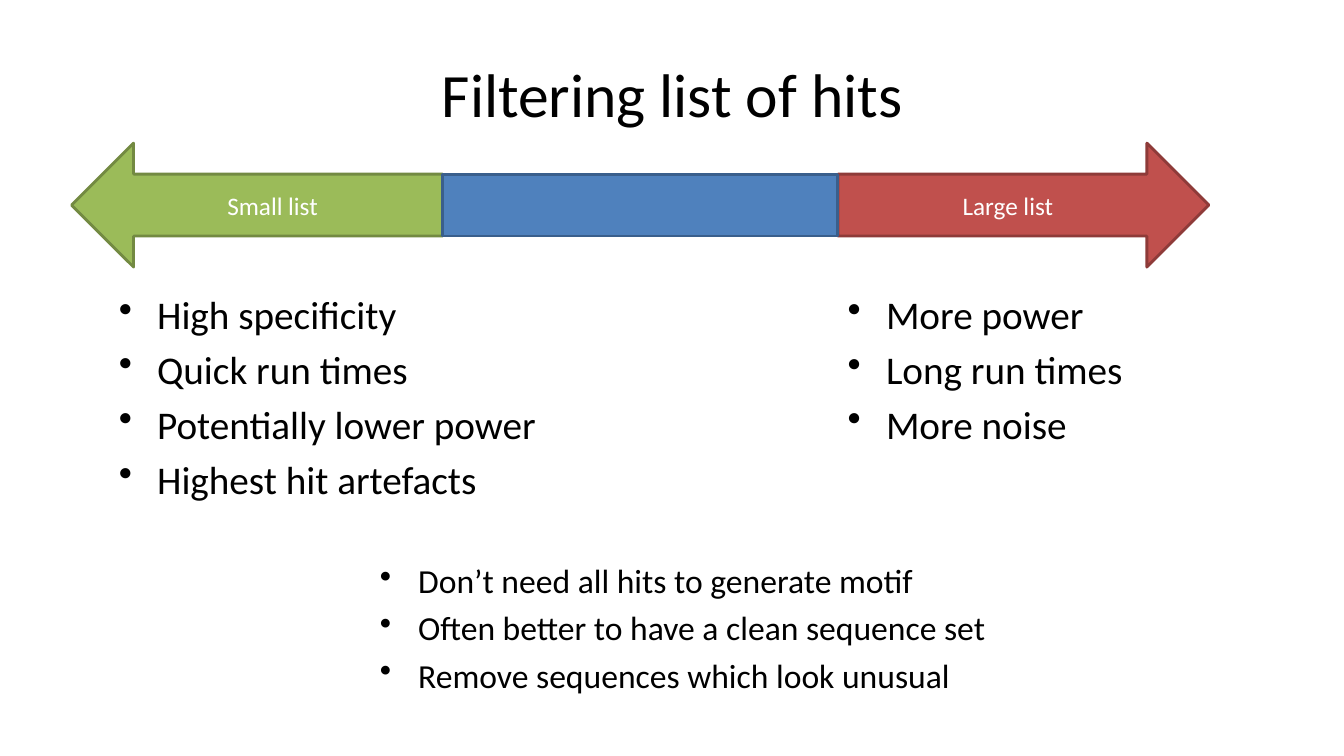
import pptx
import pptx.util
import pptx.dml.color
import pptx.enum.shapes
import pptx.enum.text
import pptx.oxml
import pptx.oxml.ns

COLORS = {
    "text": "000000",
    "label": "FFFFFF",
    "small": "9BBB59",
    "small_line": "738A42",
    "middle": "4F81BD",
    "middle_line": "3A5F8C",
    "large": "C0504D",
    "large_line": "8E3B39",
}
Inches = pptx.util.Inches
MSO_SHAPE = pptx.enum.shapes.MSO_SHAPE
CENTER = pptx.enum.text.PP_ALIGN.CENTER
MIDDLE = pptx.enum.text.MSO_ANCHOR.MIDDLE


def rgb(name):
    return pptx.dml.color.RGBColor.from_string(COLORS[name])


class SlideBuilder:
    font = "Calibri"
    indent = 0.38

    def __init__(self, slide):
        self.slide = slide

    def add_run(self, para, text, size, color):
        span = para.add_run()
        span.text = text
        span.font.name = self.font
        span.font.size = pptx.util.Pt(size)
        span.font.color.rgb = rgb(color)

    def center_text(self, frame, text, size, color):
        frame.word_wrap = True
        frame.vertical_anchor = MIDDLE
        para = frame.paragraphs[0]
        para.alignment = CENTER
        self.add_run(para, text, size, color)

    def title(self, text, left, top, width, height):
        box = self.slide.shapes.title
        box.left, box.top = Inches(left), Inches(top)
        box.width, box.height = Inches(width), Inches(height)
        self.center_text(box.text_frame, text, 44, "text")

    def block(self, kind, left, top, width, height, color, label=None):
        shape = self.slide.shapes.add_shape(
            kind, Inches(left), Inches(top), Inches(width), Inches(height))
        shape.shadow.inherit = False
        shape.fill.solid()
        shape.fill.fore_color.rgb = rgb(color)
        shape.line.color.rgb = rgb(color + "_line")
        shape.line.width = pptx.util.Pt(2)
        if label:
            self.center_text(shape.text_frame, label, 18, "label")

    def bullets(self, items, left, top, width, height, size):
        box = self.slide.shapes.add_textbox(
            Inches(left), Inches(top), Inches(width), Inches(height))
        frame = box.text_frame
        frame.word_wrap = True
        for index, item in enumerate(items):
            para = frame.add_paragraph() if index else frame.paragraphs[0]
            self.format_bullet(para)
            self.add_run(para, item, size, "text")

    def format_bullet(self, para):
        """Set a hanging indent, 20% space before and a round bullet."""
        properties = para._p.get_or_add_pPr()
        properties.set("marL", str(Inches(self.indent)))
        properties.set("indent", str(-Inches(self.indent)))
        namespace = pptx.oxml.ns.nsdecls("a")
        for xml in (
            f'<a:spcBef {namespace}><a:spcPct val="20000"/></a:spcBef>',
            f'<a:buChar {namespace} char="•"/>',
        ):
            properties.append(pptx.oxml.parse_xml(xml))


def main():
    deck = pptx.Presentation()
    deck.slide_width, deck.slide_height = Inches(13.33), Inches(7.5)
    page = SlideBuilder(deck.slides.add_slide(deck.slide_layouts[5]))

    page.title("Filtering list of hits", 0.67, 0.3, 12, 1.25)

    page.bullets(["High specificity", "Quick run times",
                  "Potentially lower power", "Highest hit artefacts"],
                 1.08, 2.83, 4.49, 3.5, 28)
    page.bullets(["More power", "Long run times", "More noise"],
                 8.31, 2.83, 3.97, 1.65, 28)

    # The middle bar is as thick as the arrow shafts and joins them.
    left, top, arrow_width, arrow_height, bar_width = 0.71, 1.42, 3.68, 1.23, 3.92
    bar_left = left + arrow_width
    large_left = bar_left + bar_width
    page.block(MSO_SHAPE.RIGHT_ARROW, large_left, top, arrow_width, arrow_height,
               "large", "Large list")
    page.block(MSO_SHAPE.LEFT_ARROW, left, top, arrow_width, arrow_height,
               "small", "Small list")
    page.block(MSO_SHAPE.RECTANGLE, bar_left, top + arrow_height / 4,
               bar_width, arrow_height / 2, "middle")

    page.bullets(["Don’t need all hits to generate motif",
                  "Often better to have a clean sequence set",
                  "Remove sequences which look unusual"],
                 3.67, 5.51, 6.77, 1.65, 24)

    deck.save("out.pptx")


if __name__ == "__main__":
    main()
